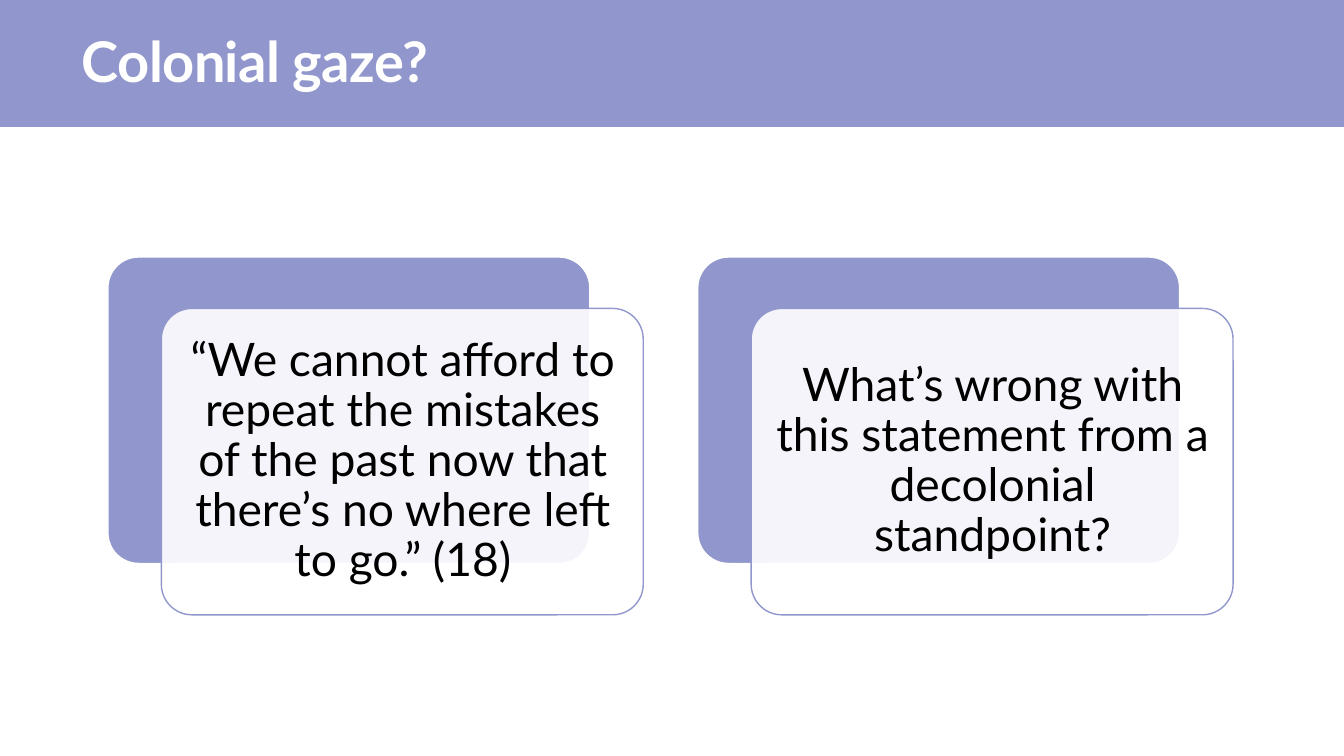
import pptx
import pptx.util
import pptx.dml.color
import pptx.enum.shapes
import pptx.enum.text
from dataclasses import dataclass
from lxml import etree

Inches, Pt = pptx.util.Inches, pptx.util.Pt
RGB = pptx.dml.color.RGBColor
SHAPE = pptx.enum.shapes.MSO_SHAPE
ALIGN = pptx.enum.text.PP_ALIGN


@dataclass(frozen=True)
class Theme:
    accent: RGB = RGB(0x91, 0x97, 0xCC)
    white: RGB = RGB(0xFF, 0xFF, 0xFF)
    text: RGB = RGB(0, 0, 0)
    font: str = "Lato"
    title_size: int = 40
    card_size: int = 33


THEME = Theme()
CARDS = [
    "“We cannot afford to repeat the mistakes of the past now that "
    "there’s no where left to go.” (18)",
    "What’s wrong with this statement from a decolonial standpoint?",
]


def add_panel(shapes, kind, box, fill, line=None, opacity=None):
    sp = shapes.add_shape(kind, *map(Inches, box))
    sp.shadow.inherit = False
    sp.fill.solid()
    sp.fill.fore_color.rgb = fill
    if opacity is not None:
        color = sp.element.spPr.find(".//" + pptx.oxml.ns.qn("a:srgbClr"))
        alpha = etree.SubElement(color, pptx.oxml.ns.qn("a:alpha"))
        alpha.set("val", str(opacity * 1000))
    if line is None:
        sp.line.fill.background()
    else:
        sp.line.color.rgb = line
        sp.line.width = Pt(1)
    if kind == SHAPE.ROUNDED_RECTANGLE:
        sp.adjustments[0] = 0.1
    return sp


def write_text(tf, text, size, color, align, bold=False):
    tf.text = text
    tf.word_wrap = True
    tf.auto_size = pptx.enum.text.MSO_AUTO_SIZE.NONE
    tf.vertical_anchor = pptx.enum.text.MSO_ANCHOR.MIDDLE
    p = tf.paragraphs[0]
    p.alignment = align
    p.line_spacing = 0.9
    r = p.runs[0]
    r.font.name = THEME.font
    r.font.size = Pt(size)
    r.font.bold = bold
    r.font.color.rgb = color
    return r


def add_header(s, x, y, w, h):
    # Band behind the title placeholder
    band = add_panel(s.shapes, SHAPE.RECTANGLE, (x, y, w, h), THEME.accent)
    title = s.shapes.title
    title.element.addprevious(band.element)
    title.left, title.top = Inches(x + 0.71), Inches(y + 0.21)
    title.width, title.height = Inches(11.54), Inches(0.86)
    r = write_text(title.text_frame, "Colonial gaze?", THEME.title_size,
                   THEME.white, ALIGN.LEFT, bold=True)
    r.font.element.set("spc", "-40") if hasattr(r.font, "element") else \
        r._r.get_or_add_rPr().set("spc", "-40")


def add_card(shapes, x, y, w, h, text):
    # Solid panel with a translucent one offset in front of it
    front_x, front_y, pad = x + 0.53, y + 0.51, 0.09
    add_panel(shapes, SHAPE.ROUNDED_RECTANGLE, (x, y, w, h),
              THEME.accent, THEME.white)
    add_panel(shapes, SHAPE.ROUNDED_RECTANGLE, (front_x, front_y, w, h),
              THEME.white, THEME.accent, opacity=90)
    # Text inside the front panel
    box = (front_x + pad, front_y + pad, w - 2 * pad + 0.01, h - 2 * pad)
    tf = shapes.add_textbox(*map(Inches, box)).text_frame
    tf.margin_left = tf.margin_right = Inches(0.14)
    tf.margin_top = tf.margin_bottom = Inches(0.14)
    write_text(tf, text, THEME.card_size, THEME.text, ALIGN.CENTER)


def add_cards(s, x, y, w, h, pitch):
    group = s.shapes.add_group_shape()
    for i, text in enumerate(CARDS):
        add_card(group.shapes, x + i * pitch, y, w, h, text)


def main():
    prs = pptx.Presentation()
    prs.slide_width, prs.slide_height = Inches(13.33), Inches(7.5)
    s = prs.slides.add_slide(prs.slide_layouts[5])
    add_header(s, 0, 0, 13.33, 1.26)
    add_cards(s, 1.07, 2.55, 4.78, 3.04, pitch=5.85)
    prs.save("out.pptx")


if __name__ == "__main__":
    main()
